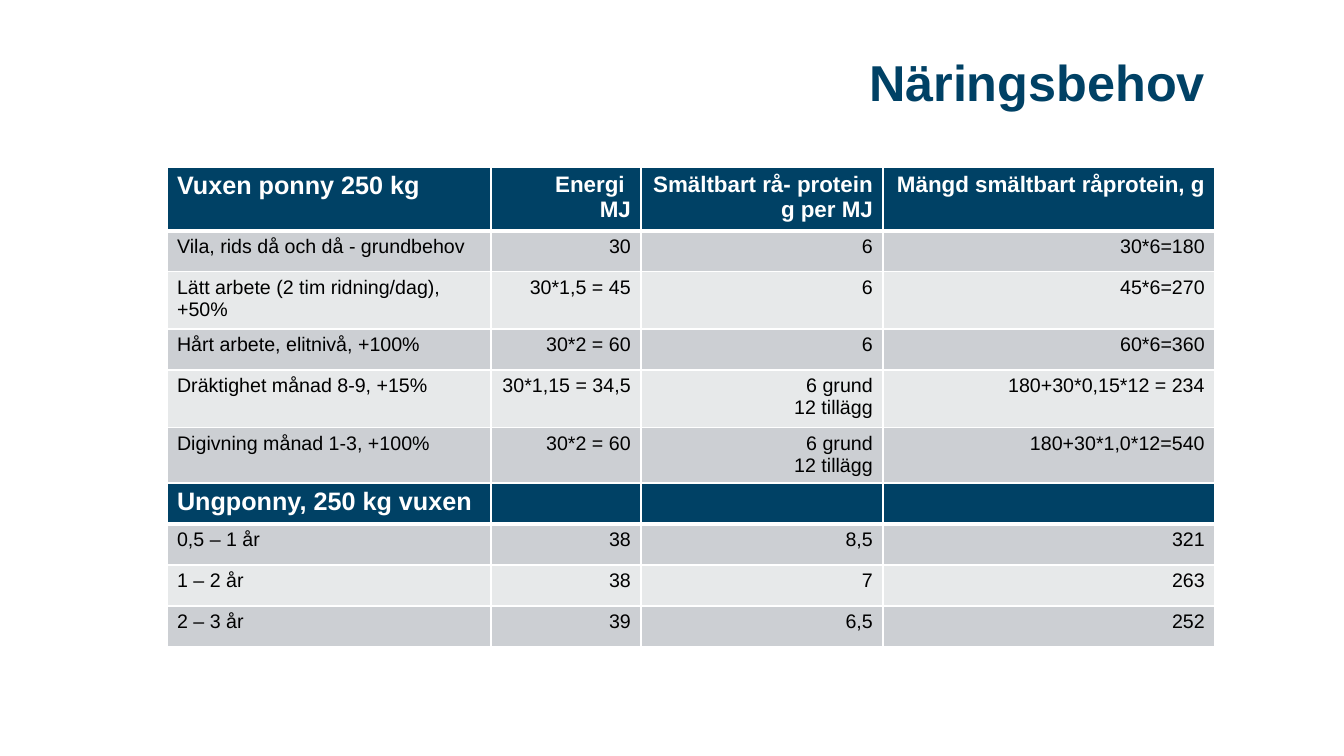
from lxml import etree
from pptx import Presentation
from pptx.dml.color import RGBColor
from pptx.enum.text import MSO_ANCHOR, PP_ALIGN
from pptx.oxml.ns import qn
from pptx.util import Emu, Pt

LEFT, RIGHT = PP_ALIGN.LEFT, PP_ALIGN.RIGHT
MIDDLE = MSO_ANCHOR.MIDDLE

NAVY = RGBColor(0x00, 0x41, 0x65)
BAND_DARK = RGBColor(0xCC, 0xCF, 0xD3)
BAND_LIGHT = RGBColor(0xE7, 0xE9, 0xEA)
WHITE = RGBColor(0xFF, 0xFF, 0xFF)
BLACK = RGBColor(0x00, 0x00, 0x00)

FONT = "Arial"
PX_PER_INCH = 100.8
SLIDE_WIDTH, SLIDE_HEIGHT = 1344, 756
CONTENT_LEFT, CONTENT_WIDTH = 167, 1048
COLUMN_WIDTHS = (324, 150, 242, 332)
ROW_HEIGHT = 41

ADULT_ROWS = (
    ("Vuxen ponny 250 kg", "Energi \nMJ", "Smältbart rå- protein g per MJ",
     "Mängd smältbart råprotein, g"),
    ("Vila, rids då och då - grundbehov", "30", "6", "30*6=180"),
    ("Lätt arbete (2 tim ridning/dag), +50%", "30*1,5 = 45", "6", "45*6=270"),
    ("Hårt arbete, elitnivå, +100%", "30*2 = 60", "6", "60*6=360"),
    ("Dräktighet månad 8-9, +15%", "30*1,15 = 34,5", "6 grund\n12 tillägg",
     "180+30*0,15*12 = 234"),
    ("Digivning månad 1-3, +100%", "30*2 = 60", "6 grund\n12 tillägg",
     "180+30*1,0*12=540"),
)
YOUNG_ROWS = (
    ("Ungponny, 250 kg vuxen", "", "", ""),
    ("0,5 – 1 år", "38", "8,5", "321"),
    ("1 – 2 år", "38", "7", "263"),
    ("2 – 3 år", "39", "6,5", "252"),
)


def px(length):
    return Emu(round(length * 914400 / PX_PER_INCH))


def write_text(frame, text, size, color, bold=False, align=LEFT, line_spacing=None):
    """Write each line of text as a paragraph of its own."""
    frame.word_wrap = True
    frame.text = text
    for paragraph in frame.paragraphs:
        paragraph.alignment = align
        if line_spacing:
            paragraph.line_spacing = line_spacing
        paragraph.font.name = FONT
        paragraph.font.size = Pt(size)
        paragraph.font.bold = bold
        paragraph.font.color.rgb = color


def set_borders(cell, top, bottom):
    """Draw white borders; top and bottom are widths in points."""
    properties = cell._tc.get_or_add_tcPr()
    sides = (("a:lnL", 1), ("a:lnR", 1), ("a:lnT", top), ("a:lnB", bottom))
    for position, (tag, width) in enumerate(sides):
        line = etree.Element(qn(tag), w=str(Pt(width)))
        fill = etree.SubElement(line, qn("a:solidFill"))
        etree.SubElement(fill, qn("a:srgbClr"), val=str(WHITE))
        properties.insert(position, line)


def format_cell(cell, text, row, column):
    is_header = row == 0
    cell.fill.solid()
    if is_header:
        cell.fill.fore_color.rgb = NAVY
        size = 16 if text and column else 18
    else:
        cell.fill.fore_color.rgb = BAND_DARK if row % 2 else BAND_LIGHT
        size = 14
    write_text(cell.text_frame, text, size=size,
               color=WHITE if is_header else BLACK, bold=is_header,
               align=RIGHT if column else LEFT)
    set_borders(cell, top=3 if row == 1 else 1, bottom=3 if is_header else 1)


def add_needs_table(slide, top, rows):
    table = slide.shapes.add_table(
        len(rows), len(COLUMN_WIDTHS), px(CONTENT_LEFT), px(top),
        px(CONTENT_WIDTH), px(ROW_HEIGHT * len(rows))).table
    for column, width in zip(table.columns, COLUMN_WIDTHS):
        column.width = px(width)
    for row, texts in enumerate(rows):
        for column, text in enumerate(texts):
            format_cell(table.cell(row, column), text, row, column)


def add_title(slide, text):
    box = slide.shapes.add_textbox(px(CONTENT_LEFT), px(33), px(CONTENT_WIDTH), px(105))
    box.text_frame.vertical_anchor = MIDDLE
    write_text(box.text_frame, text, size=36, color=NAVY, bold=True,
               align=RIGHT, line_spacing=0.9)


def main():
    presentation = Presentation()
    presentation.slide_width = px(SLIDE_WIDTH)
    presentation.slide_height = px(SLIDE_HEIGHT)
    slide = presentation.slides.add_slide(presentation.slide_layouts[6])
    add_title(slide, "Näringsbehov")
    add_needs_table(slide, 167, ADULT_ROWS)
    add_needs_table(slide, 483, YOUNG_ROWS)
    presentation.save("out.pptx")


if __name__ == "__main__":
    main()
